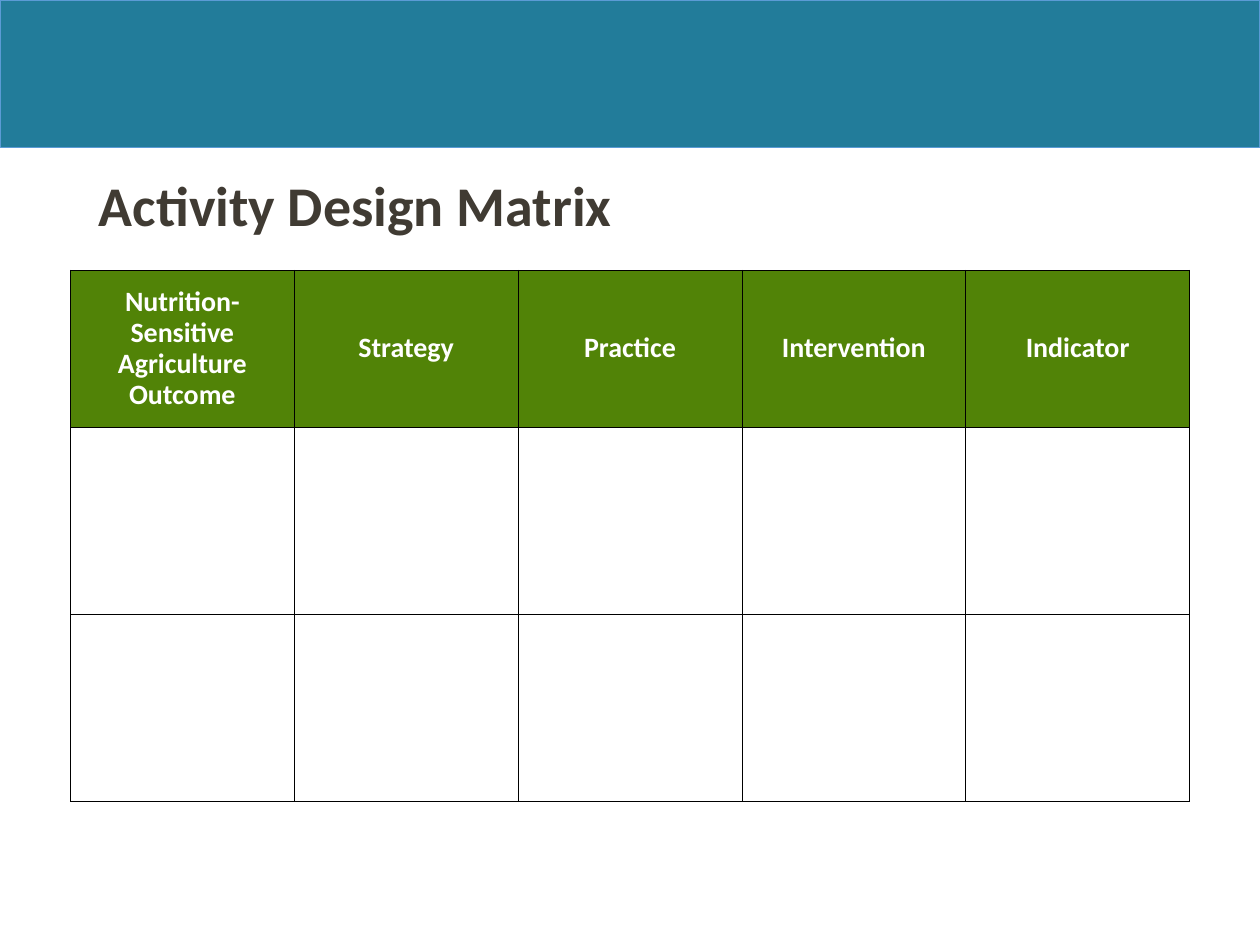
from lxml import etree
from pptx import Presentation
from pptx.dml.color import RGBColor
from pptx.enum.shapes import MSO_SHAPE
from pptx.enum.text import MSO_ANCHOR, PP_ALIGN
from pptx.oxml.ns import qn
from pptx.util import Pt

RECT = MSO_SHAPE.RECTANGLE
MIDDLE = MSO_ANCHOR.MIDDLE
LEFT, CENTER = PP_ALIGN.LEFT, PP_ALIGN.CENTER

HEADERS = [
    "Nutrition-Sensitive Agriculture Outcome",
    "Strategy",
    "Practice",
    "Intervention",
    "Indicator",
]
ROW_HEIGHTS = [89.5, 107, 107]


def rgb(value):
    return RGBColor.from_string(value)


def write(tf, text, *, font, size, color, bold=False, align=LEFT, spacing=0.9):
    p = tf.paragraphs[0]
    p.alignment = align
    p.line_spacing = spacing
    r = p.add_run()
    r.text = text
    r.font.name = font
    r.font.size = Pt(size)
    r.font.bold = bold
    r.font.color.rgb = rgb(color)


def set_borders(cell, color, width):
    """Draw all four cell edges; call before filling, as edges precede fill in the XML."""
    tc_pr = cell._tc.get_or_add_tcPr()
    for edge in ("a:lnL", "a:lnR", "a:lnT", "a:lnB"):
        ln = etree.SubElement(tc_pr, qn(edge), w=str(Pt(width)))
        fill = etree.SubElement(ln, qn("a:solidFill"))
        etree.SubElement(fill, qn("a:srgbClr"), val=color)


class Deck:
    """Holds the style and the current slide."""

    font = "Calibri"
    teal, teal_edge = "227C9A", "5B9BD5"
    green, dark, white, black = "518307", "403B33", "FFFFFF", "000000"

    def __init__(self, slide):
        self.slide = slide

    def band(self, x, y, w, h):
        sp = self.slide.shapes.add_shape(RECT, Pt(x), Pt(y), Pt(w), Pt(h))
        sp.shadow.inherit = False
        sp.fill.solid()
        sp.fill.fore_color.rgb = rgb(self.teal)
        sp.line.color.rgb = rgb(self.teal_edge)
        sp.line.width = Pt(0.5)

    def title(self, text, x, y, w, h):
        tf = self.slide.shapes.add_textbox(Pt(x), Pt(y), Pt(w), Pt(h)).text_frame
        tf.word_wrap = True
        write(tf, text, font=self.font, size=32, color=self.dark, bold=True)

    def matrix(self, headers, row_heights, x, y, w):
        """Table with a header row above empty rows to fill in."""
        table = self.slide.shapes.add_table(
            len(row_heights), len(headers), Pt(x), Pt(y), Pt(w), Pt(sum(row_heights))
        ).table
        table.horz_banding = False
        for col in table.columns:
            col.width = Pt(w / len(headers))
        for row, height in zip(table.rows, row_heights):
            row.height = Pt(height)
        for cell in table.iter_cells():
            set_borders(cell, self.black, 0.5)
            cell.fill.solid()
            cell.fill.fore_color.rgb = rgb(self.white)
        for cell, text in zip(table.rows[0].cells, headers):
            cell.fill.fore_color.rgb = rgb(self.green)
            cell.vertical_anchor = MIDDLE
            cell.margin_left = cell.margin_right = Pt(5)
            write(cell.text_frame, text, font=self.font, size=16,
                  color=self.white, bold=True, align=CENTER)


def main():
    prs = Presentation()
    prs.slide_width, prs.slide_height = Pt(720), Pt(540)
    deck = Deck(prs.slides.add_slide(prs.slide_layouts[6]))
    deck.band(0, 0, 720, 84.25)
    deck.title("Activity Design Matrix", 49.5, 98.5, 621, 86.5)
    deck.matrix(HEADERS, ROW_HEIGHTS, 40.25, 154.5, 639.5)
    prs.save("out.pptx")


if __name__ == "__main__":
    main()
